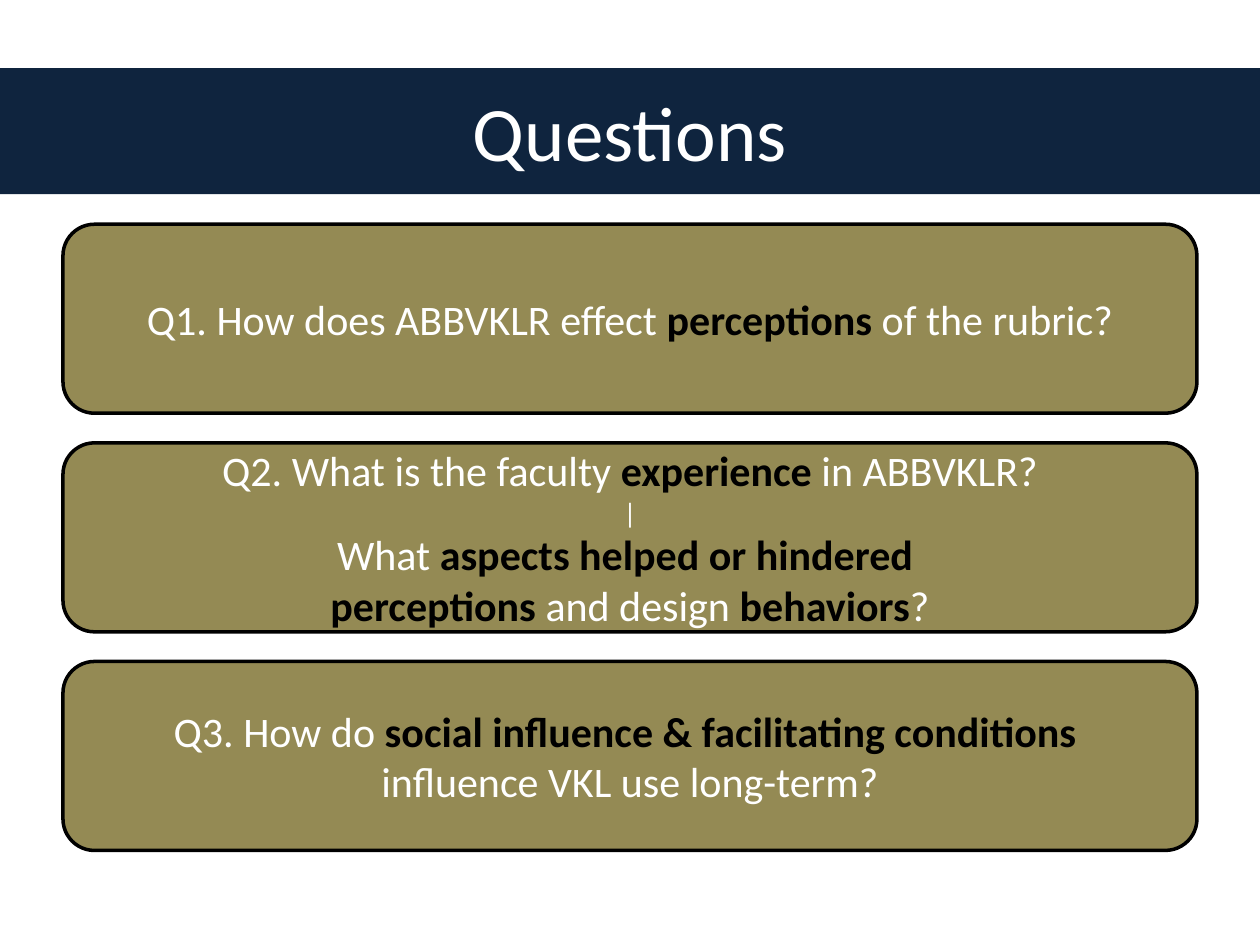
"""Build the research questions slide: a title band above three stacked question cards."""
import pptx
import pptx.util
import pptx.dml.color
import pptx.enum.shapes
import pptx.enum.text

Inches = pptx.util.Inches
Pt = pptx.util.Pt
RGBColor = pptx.dml.color.RGBColor

NAVY = RGBColor(0x0F, 0x24, 0x3E)
OLIVE = RGBColor(0x94, 0x8A, 0x54)
WHITE = RGBColor(0xFF, 0xFF, 0xFF)
BLACK = RGBColor(0x00, 0x00, 0x00)
FONT = "Calibri"
TITLE_SIZE, BODY_SIZE, DIVIDER_SIZE = 44, 24, 16

TITLE = "Questions"
QUESTIONS = [
    [(BODY_SIZE, [("Q1. How does ABBVKLR effect ", False), ("perceptions ", True),
                  ("of the rubric?", False)])],
    [(BODY_SIZE, [("Q2. What is the faculty ", False), ("experience ", True),
                  ("in ABBVKLR?", False)]),
     (DIVIDER_SIZE, [("|", False)]),
     (BODY_SIZE, [("What ", False), ("aspects helped or hindered ", True)]),
     (BODY_SIZE, [("perceptions ", True), ("and design ", False),
                  ("behaviors", True), ("?", False)])],
    [(BODY_SIZE, [("Q3. How do ", False),
                  ("social influence & facilitating conditions ", True)]),
     (BODY_SIZE, [("influence VKL use long-term?", False)])],
]

WIDTH, HEIGHT = 10, 7.5
BAND_TOP, BAND_HEIGHT = 0.54, 1
MARGIN = WIDTH / 20
CARD_TOP, CARD_HEIGHT = 1.78, HEIGHT / 5
CARDS_BOTTOM = HEIGHT * 0.9
CARD_PITCH = (CARDS_BOTTOM - CARD_HEIGHT - CARD_TOP) / (len(QUESTIONS) - 1)


def place(box, left, top, width, height):
    box.left, box.top = Inches(left), Inches(top)
    box.width, box.height = Inches(width), Inches(height)


def paint(box, color):
    box.fill.solid()
    box.fill.fore_color.rgb = color


def write(box, lines):
    frame = box.text_frame
    frame.word_wrap = True
    frame.vertical_anchor = pptx.enum.text.MSO_ANCHOR.MIDDLE
    for index, (size, spans) in enumerate(lines):
        para = frame.add_paragraph() if index else frame.paragraphs[0]
        para.alignment = pptx.enum.text.PP_ALIGN.CENTER
        for text, emphasised in spans:
            span = para.add_run()
            span.text = text
            span.font.name = FONT
            span.font.size = Pt(size)
            span.font.bold = emphasised
            span.font.color.rgb = BLACK if emphasised else WHITE


def add_card(page, row, lines):
    card = page.shapes.add_shape(
        pptx.enum.shapes.MSO_SHAPE.ROUNDED_RECTANGLE,
        Inches(MARGIN), Inches(CARD_TOP + row * CARD_PITCH),
        Inches(WIDTH - 2 * MARGIN), Inches(CARD_HEIGHT))
    card.shadow.inherit = False
    paint(card, OLIVE)
    card.line.color.rgb = BLACK
    card.line.width = Pt(2)
    write(card, lines)


def main():
    deck = pptx.Presentation()
    deck.slide_width, deck.slide_height = Inches(WIDTH), Inches(HEIGHT)
    page = deck.slides.add_slide(deck.slide_layouts.get_by_name("Title Only"))
    band = page.shapes.title
    place(band, 0, BAND_TOP, WIDTH, BAND_HEIGHT)
    paint(band, NAVY)
    write(band, [(TITLE_SIZE, [(TITLE, False)])])
    for row, lines in enumerate(QUESTIONS):
        add_card(page, row, lines)
    deck.save("out.pptx")


if __name__ == "__main__":
    main()
